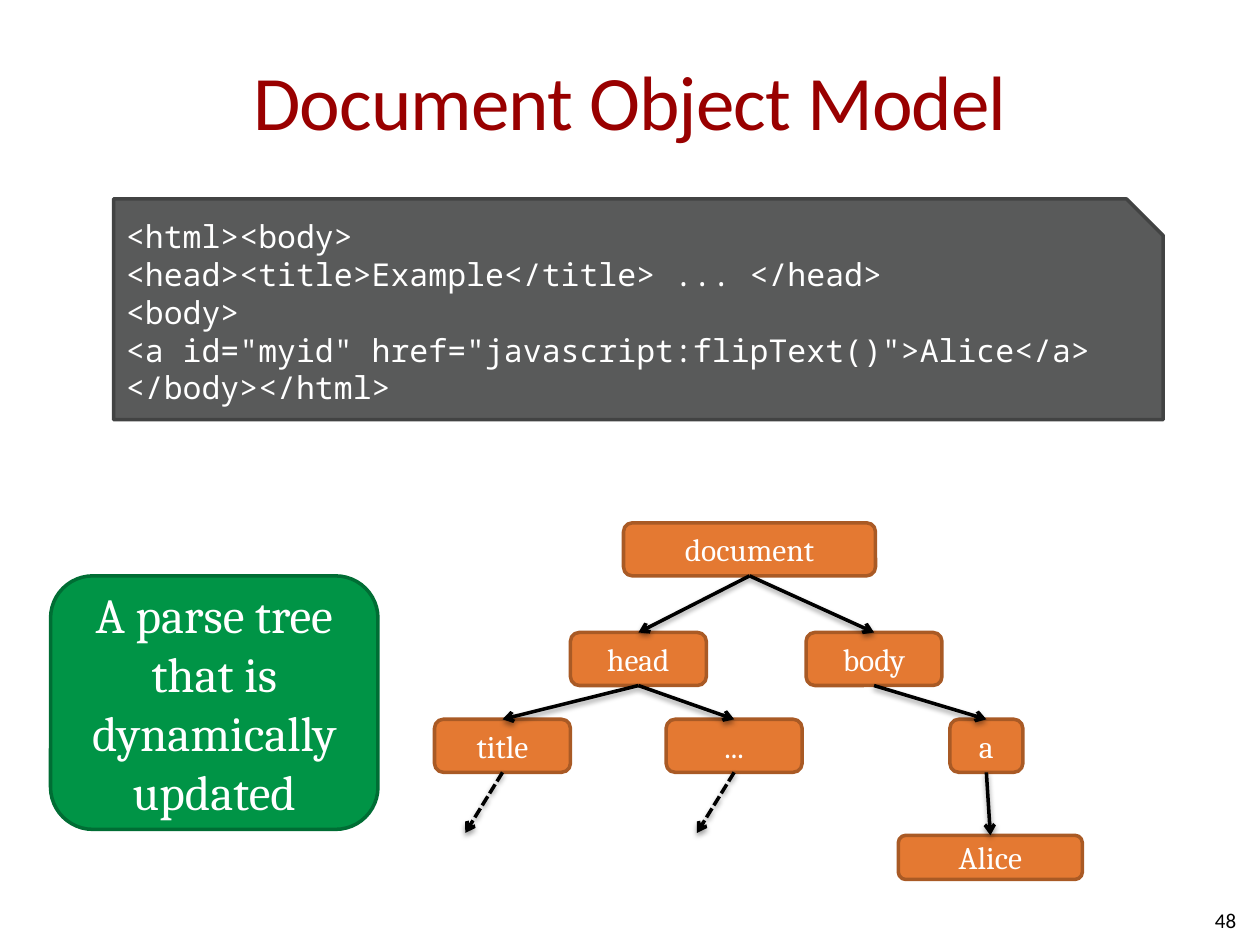
from lxml import etree
from pptx import Presentation
from pptx.dml.color import RGBColor
from pptx.enum.dml import MSO_LINE
from pptx.enum.shapes import MSO_CONNECTOR, MSO_SHAPE
from pptx.enum.text import MSO_ANCHOR, PP_ALIGN
from pptx.oxml.ns import qn
from pptx.util import Cm, Pt

LEFT, CENTER, RIGHT = PP_ALIGN.LEFT, PP_ALIGN.CENTER, PP_ALIGN.RIGHT
TOP, MIDDLE = MSO_ANCHOR.TOP, MSO_ANCHOR.MIDDLE
ROUNDED, SNIPPED = MSO_SHAPE.ROUNDED_RECTANGLE, MSO_SHAPE.SNIP_1_RECTANGLE
STRAIGHT, DASHED = MSO_CONNECTOR.STRAIGHT, MSO_LINE.SQUARE_DOT
TOP_SITE, BOTTOM_SITE = 0, 2

COLORS = {
    "title": "990000", "black": "000000", "white": "FFFFFF",
    "node": "E47932", "node_edge": "A95A25",
    "note": "009446", "note_edge": "006D34",
    "code": "595A5A", "code_edge": "424343",
}

CODE = [
    "<html><body>",
    "<head><title>Example</title> ... </head>",
    "<body>",
    '<a id="myid" href="javascript:flipText()">Alice</a>',
    "</body></html>",
]

# Label: left, top, width, height in cm, relative to the tree's box
NODES = {
    "document": (3.81, 0, 5.08, 1.07),
    "head": (2.74, 2.21, 2.74, 1.07),
    "body": (7.49, 2.21, 2.74, 1.07),
    "title": (0, 3.96, 2.74, 1.07),
    "...": (4.67, 3.96, 2.74, 1.07),
    "a": (10.39, 3.96, 1.47, 1.07),
    "Alice": (9.35, 6.3, 3.71, 0.89),
}
EDGES = [("document", "head"), ("document", "body"), ("head", "title"),
         ("head", "..."), ("body", "a"), ("a", "Alice")]
OPEN_NODES = ["title", "..."]


def rgb(name):
    return RGBColor.from_string(COLORS[name])


def write(shape, text, font, size, color, align, anchor=MIDDLE):
    frame = shape.text_frame
    frame.word_wrap = True
    frame.vertical_anchor = anchor
    frame.text = text
    for paragraph in frame.paragraphs:
        paragraph.alignment = align
        for run in paragraph.runs:
            run.font.name = font
            run.font.size = Pt(size)
            run.font.color.rgb = rgb(color)


def add_panel(slide, kind, box, style):
    panel = slide.shapes.add_shape(kind, *map(Cm, box))
    panel.shadow.inherit = False
    panel.fill.solid()
    panel.fill.fore_color.rgb = rgb(style)
    panel.line.color.rgb = rgb(style + "_edge")
    panel.line.width = Pt(2)
    return panel


def add_arrow(slide, start, end):
    arrow = slide.shapes.add_connector(STRAIGHT, *start, *end)
    arrow.line.color.rgb = rgb("black")
    arrow.line.width = Pt(2)
    etree.SubElement(arrow.line._get_or_add_ln(), qn("a:tailEnd"), type="arrow")
    # Soft shadow straight below the line
    effects = etree.SubElement(arrow._element.spPr, qn("a:effectLst"))
    shadow = etree.SubElement(effects, qn("a:outerShdw"), blurRad=str(Pt(3.1)),
                              dist=str(Pt(1.6)), dir="5400000", rotWithShape="0")
    tint = etree.SubElement(shadow, qn("a:srgbClr"), val=COLORS["black"])
    etree.SubElement(tint, qn("a:alpha"), val="38000")
    return arrow


def add_title(slide, box):
    title = slide.shapes.add_textbox(*map(Cm, box))
    write(title, "Document Object Model", "Calibri", 44, "title", CENTER)
    title.text_frame.margin_left = title.text_frame.margin_right = 0
    title.text_frame.paragraphs[0].runs[0].font._element.set("spc", "-50")


def add_page_number(slide, box):
    number = slide.shapes.add_textbox(*map(Cm, box))
    write(number, "48", "Calibri", 12, "black", RIGHT)


def add_code(slide, box):
    code = add_panel(slide, SNIPPED, box, "code")
    write(code, "\n".join(CODE), "Noto Sans Mono", 18, "white", LEFT, TOP)
    code.text_frame.margin_top = 0


def add_note(slide, box):
    note = add_panel(slide, ROUNDED, box, "note")
    write(note, "A parse tree that is dynamically updated",
          "Cambria", 28, "white", CENTER)


def add_tree(slide, left, top):
    nodes = {}
    for label, (x, y, width, height) in NODES.items():
        node = add_panel(slide, ROUNDED, (left + x, top + y, width, height), "node")
        write(node, label, "Cambria", 18, "white", CENTER)
        nodes[label] = node

    # Parent to child
    for parent, child in EDGES:
        arrow = add_arrow(slide, (0, 0), (0, 0))
        arrow.begin_connect(nodes[parent], BOTTOM_SITE)
        arrow.end_connect(nodes[child], TOP_SITE)

    # Branches that continue beyond what is shown
    for label in OPEN_NODES:
        node = nodes[label]
        x, y = node.left + node.width // 2, node.top + node.height
        branch = add_arrow(slide, (x, y), (x - Cm(0.75), y + Cm(1.22)))
        branch.begin_connect(node, BOTTOM_SITE)
        branch.line.dash_style = DASHED


def main():
    prs = Presentation()
    prs.slide_width, prs.slide_height = Cm(25.4), Cm(19.05)
    slide = prs.slides.add_slide(prs.slide_layouts[6])
    add_title(slide, (1.27, 0.43, 22.86, 3.18))
    add_page_number(slide, (19.25, 18.03, 5.92, 1.02))
    add_code(slide, (2.29, 4.01, 21.16, 4.45))
    add_note(slide, (1.02, 11.61, 6.6, 5.11))
    add_tree(slide, 8.76, 10.54)
    prs.save("out.pptx")


if __name__ == "__main__":
    main()
